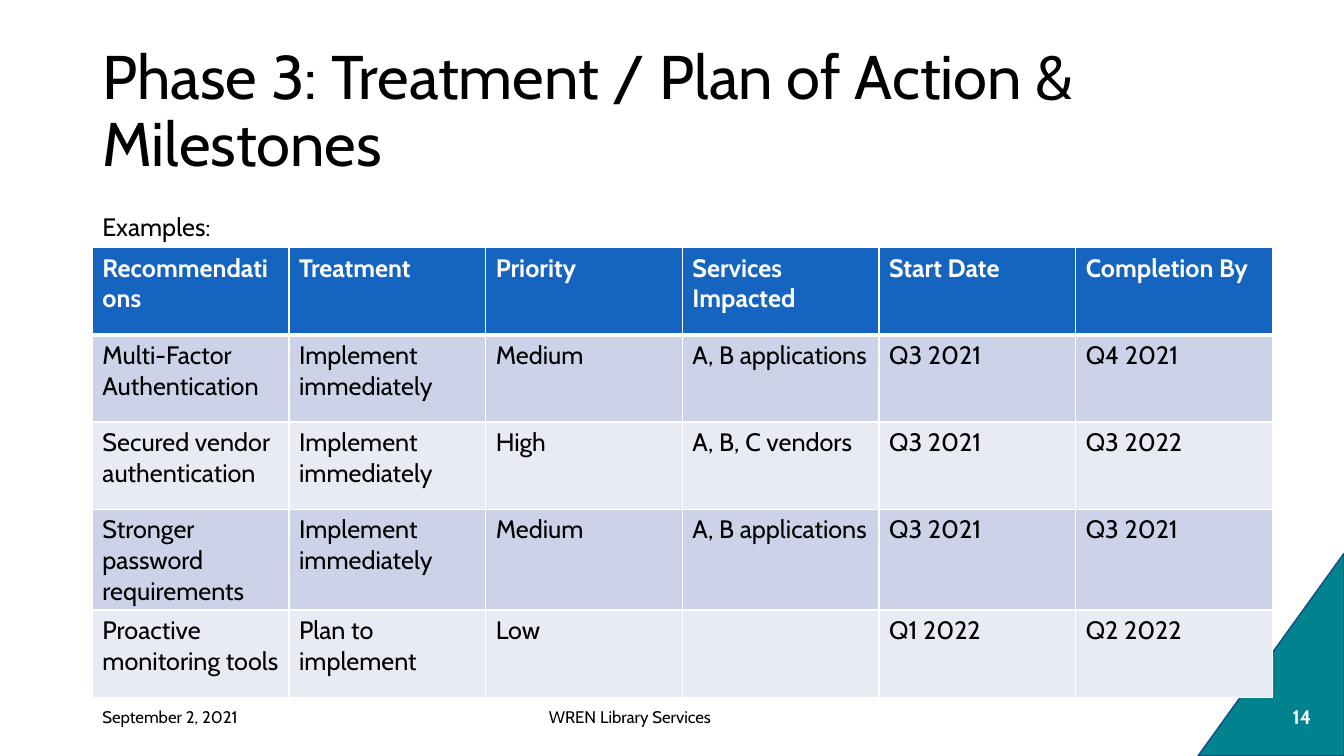
"""Build the Phase 3 treatment and milestones slide."""
from dataclasses import dataclass

from lxml import etree
from pptx import Presentation
from pptx import util as u
from pptx.dml.color import RGBColor
from pptx.enum import shapes, text
from pptx.oxml.ns import qn

PX = 9525
SLIDE = (1280, 720)


@dataclass(frozen=True)
class Theme:
    """Colours and type sizes."""
    font: str = "Cabin"
    ink: str = "000000"
    white: str = "FFFFFF"
    teal: str = "00838E"
    edge: str = "104B8E"
    header: str = "1565C0"
    bands: tuple = ("CCD3E8", "E8EAF4")
    title: int = 44
    body: int = 18
    number: int = 14
    footer: int = 12


T = Theme()
CENTER = text.PP_ALIGN.CENTER
MIDDLE = text.MSO_ANCHOR.MIDDLE

CORNER = (1114, 554, 193, 139)
FOOTERS = [
    ("WREN Library Services", (384, 664, 432, 38), dict(align=CENTER)),
    ("14", (1212, 664, 56, 38),
     dict(size=T.number, color=T.white, bold=True, align=CENTER)),
    ("September 2, 2021", (88, 664, 288, 38), {}),
]
TITLE = ("Phase 3: Treatment / Plan of Action & Milestones", (88, 38, 1104, 139))
CAPTION = ("Examples:", (88, 197, 379, 38))
TABLE = (88, 236, 1124, 415)
ROWS = [
    ("Recommendations", "Treatment", "Priority", "Services Impacted",
     "Start Date", "Completion By"),
    ("Multi-Factor Authentication", "Implement immediately", "Medium",
     "A, B applications", "Q3 2021", "Q4 2021"),
    ("Secured vendor authentication", "Implement immediately", "High",
     "A, B, C vendors", "Q3 2021", "Q3 2022"),
    ("Stronger password requirements", "Implement immediately", "Medium",
     "A, B applications", "Q3 2021", "Q3 2021"),
    ("Proactive monitoring tools", "Plan to implement", "Low", "",
     "Q1 2022", "Q2 2022"),
]


def emu(box):
    """Turn px lengths into EMU."""
    return [v * PX for v in box]


def rgb(color):
    """Read a hex colour."""
    return RGBColor.from_string(color)


def write(tf, words, size=T.body, color=T.ink, bold=False, align=None,
          spacing=None):
    """Put formatted text into a text frame."""
    tf.word_wrap = True
    p = tf.paragraphs[0]
    p.alignment = align
    p.line_spacing = spacing
    p.font.size = u.Pt(size)
    if words:
        r = p.add_run()
        r.text = words
        r.font.name = T.font
        r.font.size = u.Pt(size)
        r.font.bold = bold
        r.font.color.rgb = rgb(color)


def add_text(s, words, box, anchor=MIDDLE, **fmt):
    """Add a text box."""
    tf = s.shapes.add_textbox(*emu(box)).text_frame
    tf.vertical_anchor = anchor
    write(tf, words, **fmt)


def add_corner(s):
    """Add the teal corner triangle."""
    sp = s.shapes.add_shape(shapes.MSO_SHAPE.RIGHT_TRIANGLE, *emu(CORNER))
    sp.shadow.inherit = False
    sp.rotation = 90
    xfrm = sp._element.spPr.find(qn("a:xfrm"))
    xfrm.set("flipH", "1")
    xfrm.set("flipV", "1")
    sp.fill.solid()
    sp.fill.fore_color.rgb = rgb(T.teal)
    sp.line.color.rgb = rgb(T.edge)
    sp.line.width = u.Pt(1)


def add_borders(cell, **widths):
    """Draw white cell borders of the given point widths."""
    tc_pr = cell._tc.get_or_add_tcPr()
    for side, width in widths.items():
        ln = etree.SubElement(tc_pr, qn(f"a:ln{side}"), w=str(u.Pt(width)))
        fill = etree.SubElement(ln, qn("a:solidFill"))
        etree.SubElement(fill, qn("a:srgbClr"), val=T.white)


def add_plan(s):
    """Add the table of recommendations."""
    table = s.shapes.add_table(len(ROWS), len(ROWS[0]), *emu(TABLE)).table
    for i, row in enumerate(ROWS):
        head = i == 0
        for j, words in enumerate(row):
            cell = table.cell(i, j)
            add_borders(cell, L=1, R=1, T=3 if i == 1 else 1, B=3 if head else 1)
            cell.fill.solid()
            cell.fill.fore_color.rgb = rgb(T.header if head else T.bands[(i - 1) % 2])
            write(cell.text_frame, words, bold=head,
                  color=T.white if head else T.ink)


def main():
    """Build and save the slide."""
    prs = Presentation()
    prs.slide_width, prs.slide_height = emu(SLIDE)
    s = prs.slides.add_slide(prs.slide_layouts[6])
    add_corner(s)
    for words, box, fmt in FOOTERS:
        add_text(s, words, box, **{"size": T.footer, **fmt})
    add_text(s, *TITLE, size=T.title, spacing=0.9)
    add_plan(s)
    add_text(s, *CAPTION, anchor=text.MSO_ANCHOR.TOP)
    prs.save("out.pptx")


if __name__ == "__main__":
    main()
